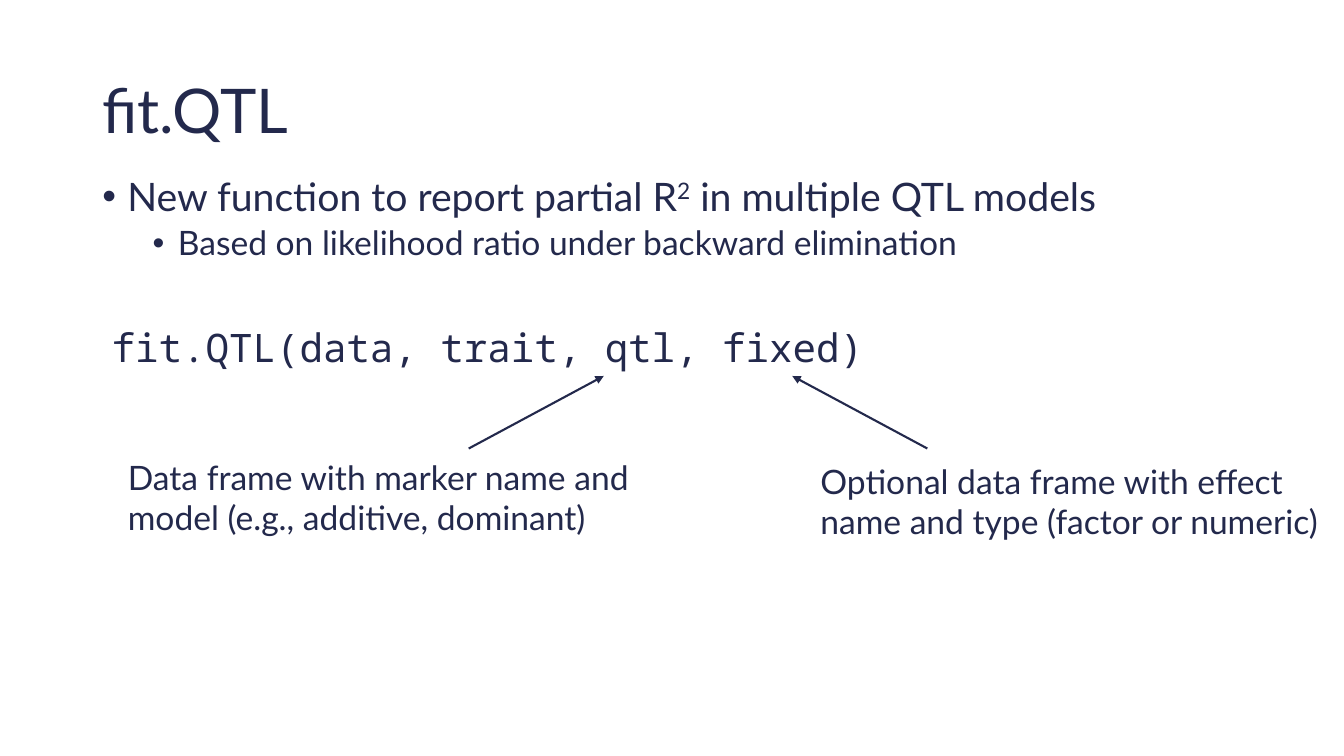
from lxml import etree
from pptx import Presentation
from pptx import util as u
from pptx.dml.color import RGBColor
from pptx.enum import shapes, text
from pptx.oxml.ns import qn

NAVY = "23294C"
SANS, MONO = "Lato", "Noto Sans Mono"


def color(hex_code):
    return RGBColor.from_string(hex_code)


def add_run(paragraph, words, size, font=SANS, raised=False):
    run = paragraph.add_run()
    run.text = words
    run.font.size = u.Pt(size)
    run.font.name = font
    run.font.color.rgb = color(NAVY)
    if raised:
        run.font._element.set("baseline", "30000")


def add_frame(slide, left, top, width, height, wrap=True):
    box = slide.shapes.add_textbox(u.Pt(left), u.Pt(top), u.Pt(width), u.Pt(height))
    box.text_frame.word_wrap = wrap
    return box.text_frame


def add_label(slide, bounds, words, size, font=SANS, wrap=True):
    frame = add_frame(slide, *bounds, wrap=wrap)
    frame.auto_size = text.MSO_AUTO_SIZE.SHAPE_TO_FIT_TEXT
    add_run(frame.paragraphs[0], words, size, font)


def add_title(slide, words):
    frame = add_frame(slide, 66, 28.8, 828, 104.4)
    frame.vertical_anchor = text.MSO_ANCHOR.MIDDLE
    heading = frame.paragraphs[0]
    heading.line_spacing = 0.9
    add_run(heading, words, 44)


def format_bullet(paragraph, level):
    paragraph.level = level
    paragraph.line_spacing = 0.9
    paragraph.space_before = u.Pt(5 * level)
    properties = paragraph._p.get_or_add_pPr()
    properties.set("marL", str(u.Pt(18 + 36 * level)))
    properties.set("indent", str(u.Pt(-18)))
    etree.SubElement(properties, qn("a:buFont")).set("typeface", "Arial")
    etree.SubElement(properties, qn("a:buChar")).set("char", "•")


def add_summary(slide):
    frame = add_frame(slide, 66, 123.12, 828, 313.92)
    purpose = frame.paragraphs[0]
    format_bullet(purpose, 0)
    add_run(purpose, "New function to report partial R", 28)
    add_run(purpose, "2", 28, raised=True)
    add_run(purpose, " in multiple QTL models", 28)
    method = frame.add_paragraph()
    format_bullet(method, 1)
    add_run(method, "Based on likelihood ratio under backward elimination", 24)


def add_arrow(slide, start_x, end_x, start_y=320.4, end_y=268.56):
    arrow = slide.shapes.add_connector(
        shapes.MSO_CONNECTOR.STRAIGHT,
        u.Pt(start_x), u.Pt(start_y), u.Pt(end_x), u.Pt(end_y))
    arrow.line.color.rgb = color(NAVY)
    arrow.line.width = u.Pt(1.5)
    etree.SubElement(arrow.line._get_or_add_ln(), qn("a:tailEnd")).set("type", "triangle")
    etree.SubElement(arrow._element.spPr, qn("a:effectLst"))


def main():
    deck = Presentation()
    deck.slide_width, deck.slide_height = u.Pt(960), u.Pt(540)
    slide = deck.slides.add_slide(deck.slide_layouts[6])

    add_title(slide, "fit.QTL")
    add_summary(slide)
    add_label(slide, (72.72, 227.52, 555.84, 41.04),
              "fit.QTL(data, trait, qtl, fixed)", 28, MONO, wrap=False)
    add_label(slide, (84.24, 322.56, 380.88, 65.52),
              "Data frame with marker name and model (e.g., additive, dominant)", 24)
    add_label(slide, (578.88, 325.44, 380.88, 65.52),
              "Optional data frame with effect name and type (factor or numeric)", 24)
    add_arrow(slide, 334.8, 431.28)
    add_arrow(slide, 662.4, 565.92)

    deck.save("out.pptx")


if __name__ == "__main__":
    main()
